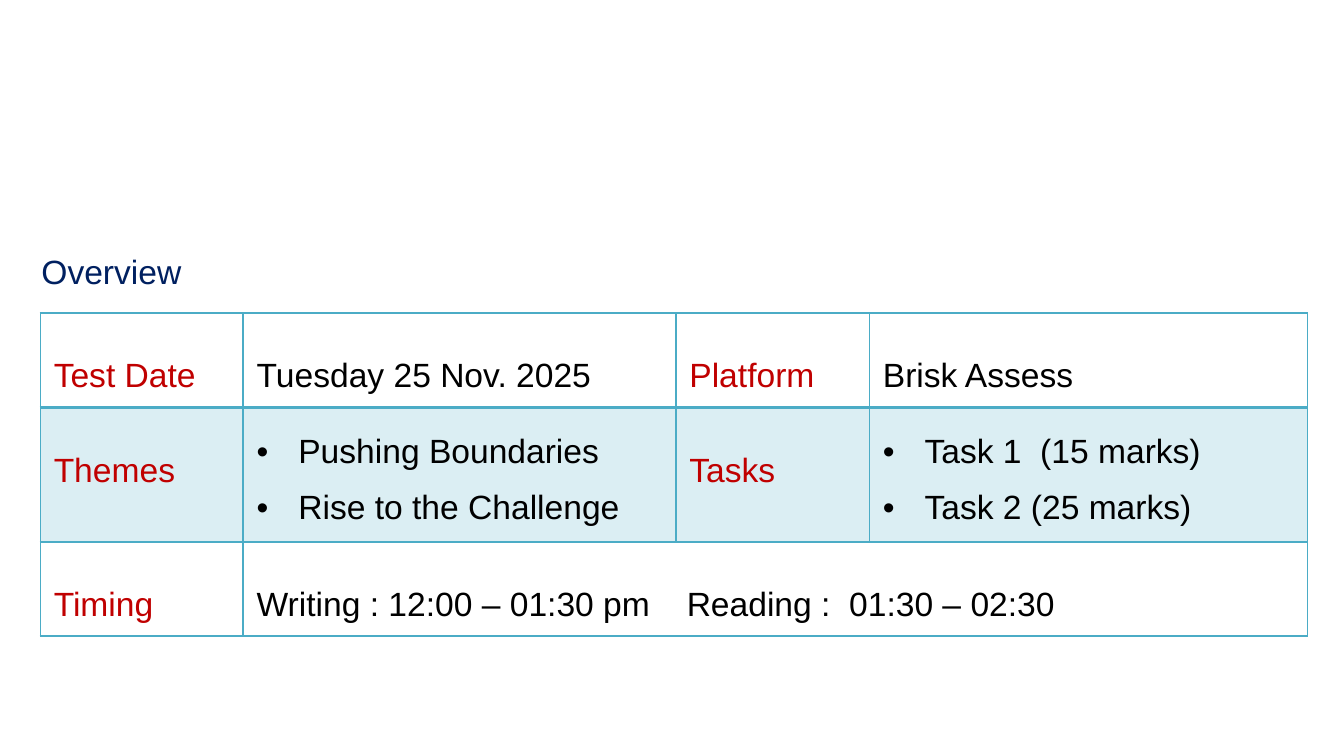
from lxml import etree
from pptx import Presentation
from pptx import util as u
from pptx.dml.color import RGBColor
from pptx.oxml import ns

NAVY = RGBColor(0x00, 0x20, 0x60)
RED = RGBColor(0xC0, 0x00, 0x00)
BLACK = RGBColor(0x00, 0x00, 0x00)
TEAL = RGBColor(0x4B, 0xAC, 0xC6)
FONT = "Arial"


def add(root, tag, **attrs):
    return etree.SubElement(root, ns.qn(tag), **attrs)


def style(para, color):
    para.font.name = FONT
    para.font.size = u.Pt(18)
    para.font.color.rgb = color


deck = Presentation()
deck.slide_width = u.Inches(10)
deck.slide_height = deck.slide_width * 9 // 16
slide = deck.slides.add_slide(deck.slide_layouts[6])

title = slide.shapes.add_textbox(
    u.Inches(0.21), u.Inches(1.82), u.Inches(1.45), u.Inches(0.4))
title.text_frame.word_wrap = True
head = title.text_frame.paragraphs[0]
head.text = "Overview"
style(head, NAVY)

widths = [1.51, 3.22, 1.44, 3.26]
height = 0.64
rows = [
    [["Test Date"], ["Tuesday 25 Nov. 2025"], ["Platform"], ["Brisk Assess"]],
    [["Themes"], ["Pushing Boundaries", "Rise to the Challenge"],
     ["Tasks"], ["Task 1  (15 marks)", "Task 2 (25 marks)"]],
    [["Timing"], ["Writing : 12:00 – 01:30 pm\tReading :  01:30 – 02:30"], [], []],
]
frame = slide.shapes.add_table(
    len(rows), len(widths), u.Inches(0.3), u.Inches(2.33),
    u.Inches(sum(widths)), u.Inches(height * len(rows)))
table = frame.table
table.first_row = False
table.horz_banding = False
for col, width in zip(table.columns, widths):
    col.width = u.Inches(width)
for row in table.rows:
    row.height = u.Inches(height)
table.cell(2, 1).merge(table.cell(2, 3))

for r, row in enumerate(rows):
    for c, lines in enumerate(row):
        cell = table.cell(r, c)
        body = cell.text_frame
        for n, line in enumerate(lines):
            para = body.paragraphs[0] if n == 0 else body.add_paragraph()
            para.text = line
            props = para._p.get_or_add_pPr()
            if len(lines) > 1:
                props.set("marL", str(u.Inches(0.31)))
                props.set("indent", str(u.Inches(-0.31)))
                add(props, "a:buFont", typeface=FONT)
                add(props, "a:buChar", char="•")
            if "\t" in line:
                tabs = add(props, "a:tabLst")
                add(tabs, "a:tab", pos=str(u.Inches(3.2)), algn="l")
            para.line_spacing = 1.5 if len(lines) > 1 else 2.0
            style(para, BLACK if c % 2 else RED)

        edges = cell._tc.get_or_add_tcPr()
        for side in "LRTB":
            thick = (r, side) in [(0, "B"), (1, "T")]
            line = add(edges, f"a:ln{side}", w=str(u.Pt(2 if thick else 1)))
            ink = add(line, "a:solidFill")
            add(ink, "a:srgbClr", val=str(TEAL))
        if r == 1:
            cell.fill.solid()
            cell.fill.fore_color.rgb = TEAL
            tint = edges.find(ns.qn("a:solidFill")).find(ns.qn("a:srgbClr"))
            add(tint, "a:alpha", val="20000")
        else:
            cell.fill.background()

deck.save("out.pptx")
